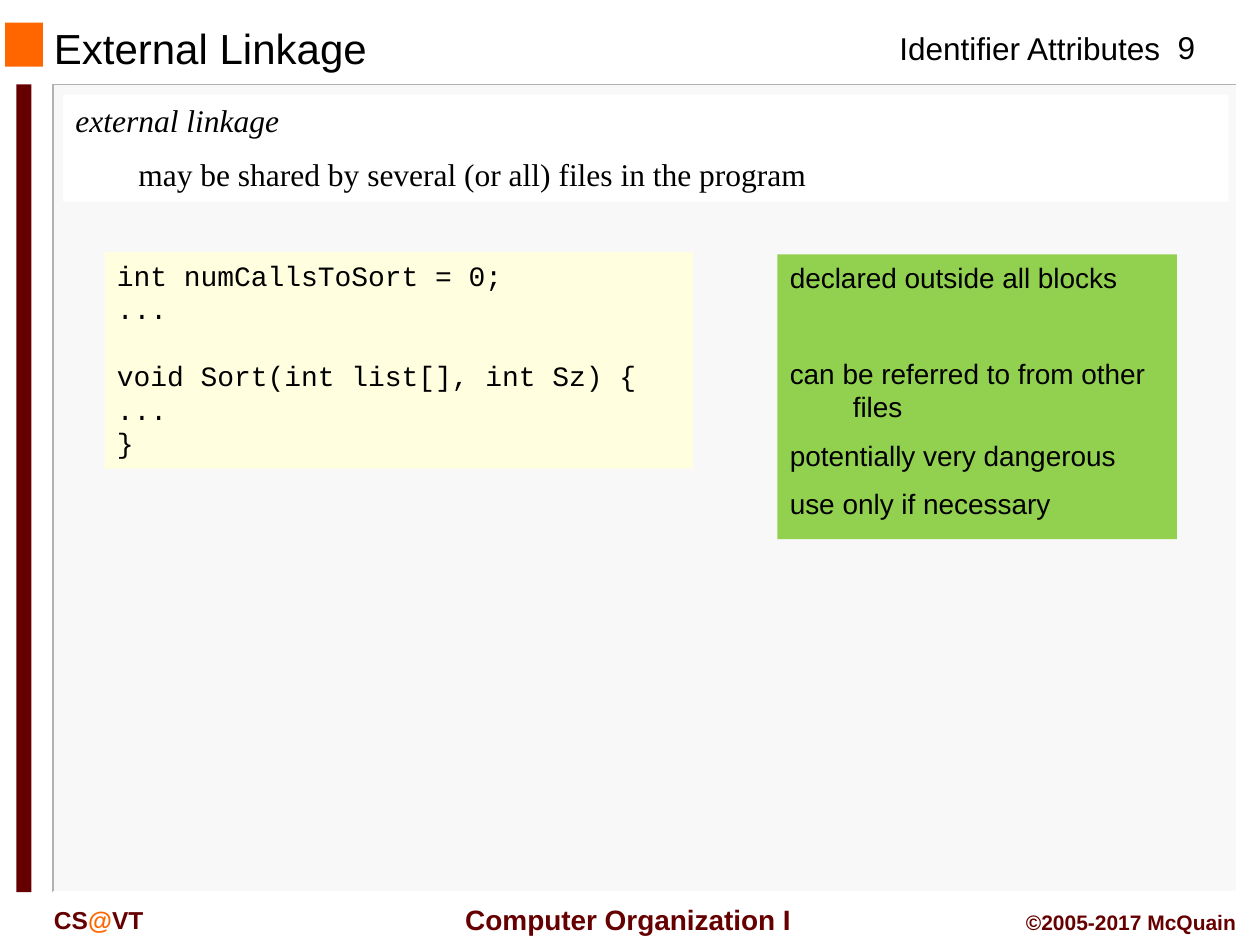
from pptx import Presentation
from pptx.dml.color import RGBColor
from pptx.enum.shapes import MSO_CONNECTOR as CONN, MSO_SHAPE as SHAPE
from pptx.enum.text import MSO_ANCHOR as ANCHOR, PP_ALIGN as ALIGN
from pptx.oxml.ns import qn
from pptx.util import Inches, Pt
from lxml.etree import SubElement

MAROON, ORANGE, BLACK = "660000", "FF6600", "000000"


def rgb(value):
    return RGBColor.from_string(value)


def add_box(s, box, fill):
    sp = s.shapes.add_shape(SHAPE.RECTANGLE, *map(Inches, box))
    sp.shadow.inherit = False
    sp.fill.solid()
    sp.fill.fore_color.rgb = rgb(fill)
    sp.line.fill.background()
    return sp


def add_rule(s, start, end, color):
    sp = s.shapes.add_connector(CONN.STRAIGHT, *map(Inches, start + end))
    sp.line.color.rgb = rgb(color)
    sp.line.width = Pt(1)
    SubElement(sp._element.spPr, qn("a:effectLst"))


def style(p, size, font="Arial", color=BLACK, bold=False, align=ALIGN.LEFT):
    p.font.size = Pt(size)
    p.font.name = font
    p.font.color.rgb = rgb(color)
    p.font.bold = bold
    p.alignment = align


def add_label(s, box, text, size, wrap=True, anchor=ANCHOR.TOP, **look):
    tf = s.shapes.add_textbox(*map(Inches, box)).text_frame
    tf.word_wrap = wrap
    tf.vertical_anchor = anchor
    p = tf.paragraphs[0]
    p.text = text
    style(p, size, **look)
    return p


def add_panel(s, box, fill, lines, size, font, gaps):
    tf = add_box(s, box, fill).text_frame
    tf.word_wrap = True
    tf.vertical_anchor = ANCHOR.TOP
    for i, (line, gap) in enumerate(zip(lines, gaps)):
        p = tf.paragraphs[0] if i == 0 else tf.add_paragraph()
        p.text = line
        p.space_before = Pt(gap)
        style(p, size, font)
    return tf.paragraphs


def indent(p, left, first):
    pPr = p._p.get_or_add_pPr()
    pPr.set("marL", str(Inches(left)))
    pPr.set("indent", str(Inches(first)))


def add_frame(s, box):
    left, top, width, height = box
    right, bottom = left + width, top + height
    add_box(s, box, "F8F8F8")
    add_rule(s, (left, top), (right, top), "B2B2B2")
    add_rule(s, (left, top), (left, bottom), "B2B2B2")
    add_rule(s, (right, top), (right, bottom), "FFFFFF")
    add_rule(s, (left, bottom), (right, bottom), "FFFFFF")
    add_box(s, (0.13, top, 0.12, height), MAROON)


def add_header(s, title, topic, number):
    add_box(s, (0.04, 0.18, 0.3, 0.35), ORANGE)
    add_label(s, (0.33, 0.19, 6.33, 0.38), title, 24, anchor=ANCHOR.MIDDLE)
    add_label(s, (7.04, 0.18, 2.29, 0.4), topic, 18, wrap=False)
    add_label(s, (9.08, 0.17, 0.67, 0.4), number, 18, align=ALIGN.CENTER)


def add_footer(s):
    look = dict(color=MAROON, bold=True)
    add_label(s, (3.5, 7.11, 2.91, 0.37), " Computer Organization I", 16,
              wrap=False, anchor=ANCHOR.MIDDLE, align=ALIGN.CENTER, **look)
    p = add_label(s, (0.33, 7.13, 1.5, 0.33), "CS", 14, **look)
    for text, color in (("@", ORANGE), ("VT", MAROON)):
        r = p.add_run()
        r.text = text
        r.font.color.rgb = rgb(color)
    add_label(s, (7.83, 7.17, 2.08, 0.3), "©2005-2017 McQuain", 12,
              align=ALIGN.RIGHT, **look)


def add_definition(s, box):
    term, meaning = add_panel(
        s, box, "FFFFFF",
        ["external linkage",
         "may be shared by several (or all) files in the program"],
        18, "Times New Roman", [0, 9.5])
    term.font.italic = True
    indent(meaning, 0.5, 0)


def add_code(s, box):
    lines = ["int numCallsToSort = 0;", "...",
             "void Sort(int list[], int Sz) {", "...", "}"]
    add_panel(s, box, "FFFFE0", lines, 16, "Courier New", [0, 0, 19, 0, 0])


def add_notes(s, box):
    lines = ["declared outside all blocks", "can be referred to from other files",
             "potentially very dangerous", "use only if necessary"]
    for p in add_panel(s, box, "92D050", lines, 16, "Arial", [0, 35.5, 8.5, 8.5]):
        indent(p, 0.5, -0.5)


def main():
    prs = Presentation()
    prs.slide_width, prs.slide_height = Inches(10), Inches(7.5)
    s = prs.slides.add_slide(prs.slide_layouts[6])
    add_frame(s, (0.42, 0.67, 9.4, 6.41))
    add_header(s, "External Linkage", "Identifier Attributes", "9")
    add_footer(s)
    add_definition(s, (0.5, 0.75, 9.25, 0.85))
    add_code(s, (0.83, 2, 4.67, 1.72))
    add_notes(s, (6.17, 2.02, 3.17, 2.26))
    prs.save("out.pptx")


if __name__ == "__main__":
    main()
